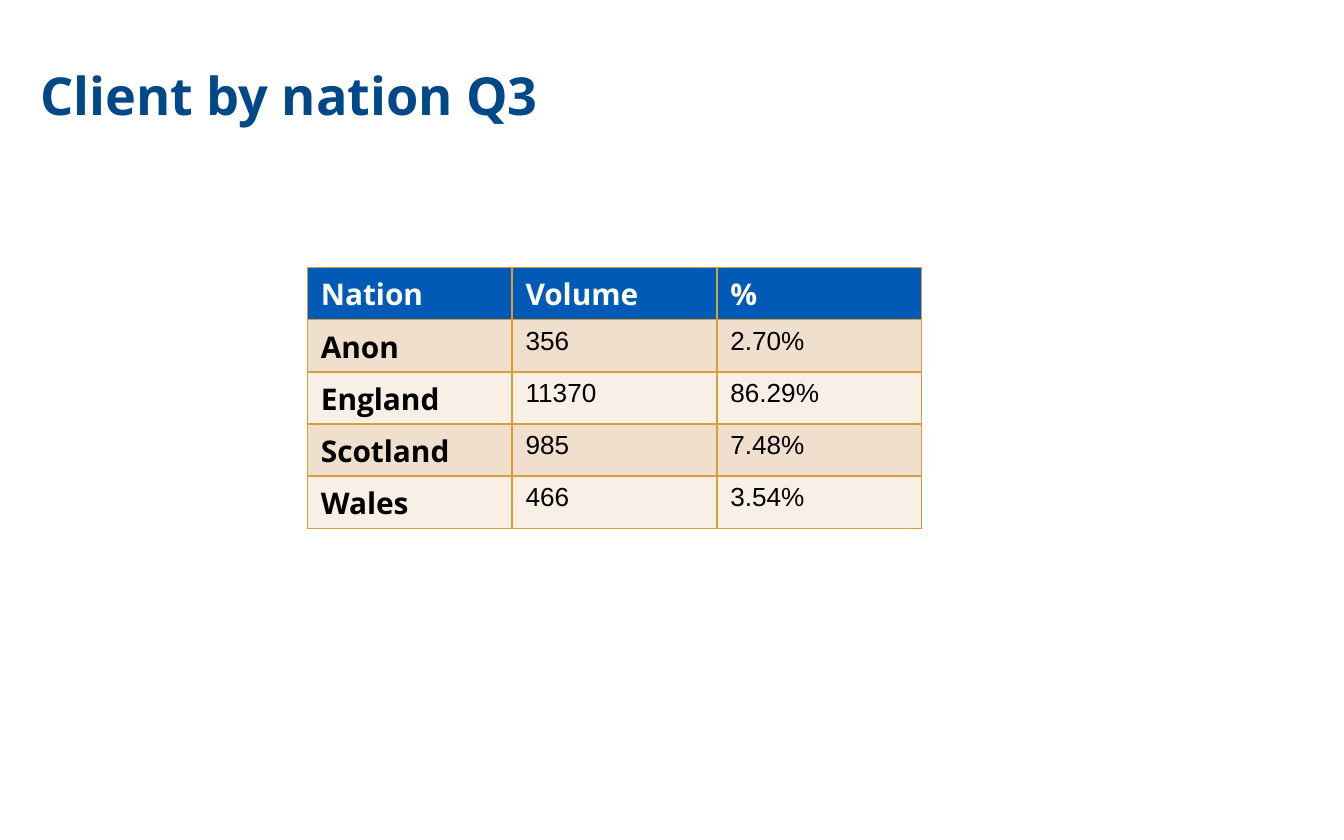
from lxml import etree
from pptx import Presentation
from pptx.dml.color import RGBColor
from pptx.enum import text
from pptx.oxml import ns
from pptx.util import Pt

COLORS = {
    "title": "004888",
    "header": "005AB6",
    "header_text": "FFFFFF",
    "body_text": "000000",
    "band_dark": "F0DFCC",
    "band_light": "F8EFE7",
    "border": "D89F39",
}
ROWS = [
    ("Nation", "Volume", "%"),
    ("Anon", "356", "2.70%"),
    ("England", "11370", "86.29%"),
    ("Scotland", "985", "7.48%"),
    ("Wales", "466", "3.54%"),
]
COLUMN_WIDTH = 109.7
ROW_HEIGHT = 28


def style_text(frame, font_name, size, color, bold):
    for para in frame.paragraphs:
        for span in para.runs:
            span.font.name = font_name
            span.font.size = Pt(size)
            span.font.bold = bold
            span.font.color.rgb = RGBColor.from_string(COLORS[color])


def add_title(page, words):
    box = page.shapes.add_textbox(Pt(14.4), Pt(26.6), Pt(648), Pt(75))
    frame = box.text_frame
    frame.word_wrap = True
    frame.vertical_anchor = text.MSO_ANCHOR.TOP
    frame.margin_left = frame.margin_right = Pt(7.2)
    frame.margin_top = frame.margin_bottom = Pt(7.2)
    frame.text = words
    style_text(frame, "Open Sans", 28, "title", True)


def add_borders(cell):
    """Draw a 1 pt line on all four sides; lines must precede the fill."""
    properties = cell._tc.get_or_add_tcPr()
    for position, side in enumerate(("lnL", "lnR", "lnT", "lnB")):
        line = etree.Element(ns.qn(f"a:{side}"), w=str(Pt(1)))
        fill = etree.SubElement(line, ns.qn("a:solidFill"))
        etree.SubElement(fill, ns.qn("a:srgbClr"), val=COLORS["border"])
        properties.insert(position, line)


def fill_cell(cell, words, row, column):
    is_header = row == 0
    if is_header:
        fill = "header"
    else:
        fill = "band_dark" if row % 2 else "band_light"
    cell.fill.solid()
    cell.fill.fore_color.rgb = RGBColor.from_string(COLORS[fill])
    add_borders(cell)

    cell.text_frame.text = words
    color = "header_text" if is_header else "body_text"
    if is_header or column == 0:
        style_text(cell.text_frame, "Open Sans", 16, color, True)
    else:
        style_text(cell.text_frame, "Arial", 14, color, False)


def add_nation_table(page):
    columns = len(ROWS[0])
    frame = page.shapes.add_table(
        len(ROWS), columns, Pt(164.7), Pt(143.2),
        Pt(COLUMN_WIDTH * columns), Pt(ROW_HEIGHT * len(ROWS)))
    table = frame.table
    for column in table.columns:
        column.width = Pt(COLUMN_WIDTH)
    for row, values in enumerate(ROWS):
        table.rows[row].height = Pt(ROW_HEIGHT)
        for column, words in enumerate(values):
            fill_cell(table.cell(row, column), words, row, column)


def main():
    deck = Presentation()
    deck.slide_width, deck.slide_height = Pt(720), Pt(450)
    page = deck.slides.add_slide(deck.slide_layouts[6])
    add_title(page, "Client by nation Q3")
    add_nation_table(page)
    deck.save("out.pptx")


if __name__ == "__main__":
    main()
